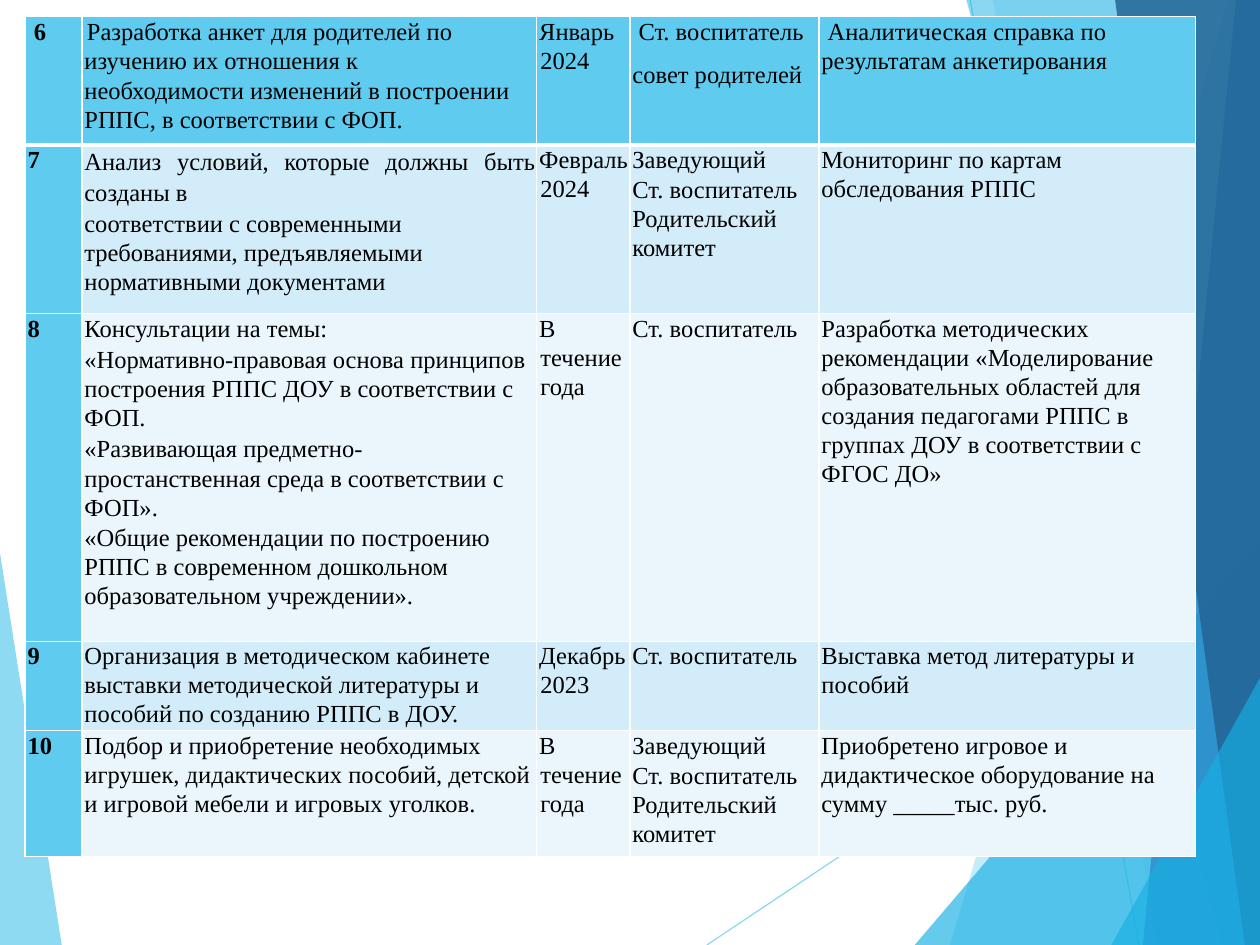
from lxml import etree
from pptx import Presentation
from pptx.dml.color import RGBColor
from pptx.enum.shapes import MSO_CONNECTOR
from pptx.enum.text import PP_ALIGN
from pptx.oxml.ns import qn
from pptx.util import Inches, Pt

STRAIGHT = MSO_CONNECTOR.STRAIGHT
LEFT, JUSTIFY = PP_ALIGN.LEFT, PP_ALIGN.JUSTIFY

WIDTH, HEIGHT = 10, 7.5
FONT, TEXT_SIZE = "Times New Roman", 14
COLORS = {
    "sky": "5FCBEF", "cyan": "17B0E4", "blue": "2E83C3", "navy": "226292",
    "band dark": "D2ECF9", "band light": "EAF6FC", "border": "FFFFFF", "text": "000000",
}

# Background facets: colour, opacity in percent, corner points in inches
LEFT_FACET = ("sky", 70, [(0, 4.39), (0.49, HEIGHT), (0, HEIGHT)])
RIGHT_FACETS = [
    ("sky", 36, [(9.75, 0), (7.54, HEIGHT), (WIDTH, HEIGHT), (WIDTH, 0)]),
    ("sky", 20, [(7.88, 0), (9.19, HEIGHT), (WIDTH, HEIGHT), (WIDTH, 0)]),
    ("cyan", 66, [(7.26, HEIGHT), (WIDTH, 4.29), (WIDTH, HEIGHT)]),
    ("cyan", 50, [(7.67, 0), (9.7, HEIGHT), (WIDTH, HEIGHT), (WIDTH, 0)]),
    ("blue", 70, [(9.81, 0), (9.07, HEIGHT), (WIDTH, HEIGHT), (WIDTH, 0)]),
    ("navy", 82, [(8.85, 0), (9.88, HEIGHT), (WIDTH, HEIGHT), (WIDTH, 0)]),
    ("cyan", 66, [(8.82, HEIGHT), (WIDTH, 5.38), (WIDTH, HEIGHT)]),
]
RAYS = [((5.61, HEIGHT), (WIDTH, 4.57)), ((7.7, 0), (9.04, HEIGHT))]

TABLE_LEFT, TABLE_TOP = 0.2, 0.13
COLUMN_WIDTHS = [0.45, 3.61, 0.74, 1.5, 2.99]
ROW_HEIGHTS = [1.02, 1.34, 2.6, 0.71, 1]

# Each cell is a list of paragraphs
ROWS = [
    [
        [" 6"],
        ["Разработка анкет для родителей по изучению их отношения к",
         "необходимости изменений в построении РППС, в соответствии с ФОП."],
        ["Январь 2024"],
        [" Ст. воспитатель", "совет родителей"],
        [" Аналитическая справка по результатам анкетирования"],
    ],
    [
        ["7"],
        ["Анализ условий, которые должны быть созданы в",
         "соответствии с современными требованиями, предъявляемыми "
         "нормативными документами"],
        ["Февраль 2024"],
        ["Заведующий", "Ст. воспитатель Родительский комитет"],
        ["Мониторинг по картам обследования РППС"],
    ],
    [
        ["8"],
        ["Консультации на темы:",
         "«Нормативно-правовая основа принципов построения РППС ДОУ в "
         "соответствии с ФОП.",
         "«Развивающая предметно-",
         "простанственная среда в соответствии с ФОП».",
         "«Общие рекомендации по построению РППС в современном дошкольном "
         "образовательном учреждении»."],
        ["В течение года"],
        ["Ст. воспитатель"],
        ["Разработка методических рекомендации «Моделирование образовательных "
         "областей для создания педагогами РППС в группах ДОУ в соответствии с ФГОС ДО»"],
    ],
    [
        ["9"],
        ["Организация в методическом кабинете выставки методической литературы "
         "и пособий по созданию РППС в ДОУ."],
        ["Декабрь 2023"],
        ["Ст. воспитатель"],
        ["Выставка метод литературы и пособий"],
    ],
    [
        ["10"],
        ["Подбор и приобретение необходимых игрушек, дидактических пособий, "
         "детской и игровой мебели и игровых уголков."],
        ["В течение года"],
        ["Заведующий", "Ст. воспитатель Родительский комитет"],
        ["Приобретено игровое и дидактическое оборудование на сумму _____тыс. руб."],
    ],
]

# Exceptions to the common paragraph format
LINE_SPACING = 1.07
SPECIAL_SPACING = {(1, 1, 0): 1.15, (2, 1, 0): 1.08, (2, 1, 1): 1.08, (2, 1, 2): 1.08}
SPACE_AFTER, WIDE_SPACE_AFTER = 0.8, 8
WIDE_CELLS = {(0, 0), (0, 2), (0, 3)}
JUSTIFIED = {(1, 1, 0)}
FIRST_LINE_INDENTS = {(0, 1, 0): 0.02}
MONTH_COLUMN = 2


def color(name):
    return RGBColor.from_string(COLORS[name])


def set_opacity(shape, percent):
    for rgb in shape._element.spPr.iter(qn("a:srgbClr")):
        etree.SubElement(rgb, qn("a:alpha"), val=str(percent * 1000))


def add_facet(slide, color_name, opacity, points):
    corners = [(Inches(x), Inches(y)) for x, y in points]
    builder = slide.shapes.build_freeform(*corners[0])
    builder.add_line_segments(corners[1:], close=True)
    shape = builder.convert_to_shape()
    shape.shadow.inherit = False
    shape.fill.solid()
    shape.fill.fore_color.rgb = color(color_name)
    shape.line.fill.background()
    set_opacity(shape, opacity)


def add_ray(slide, start, end):
    ray = slide.shapes.add_connector(STRAIGHT, *map(Inches, start + end))
    ray.line.color.rgb = color("sky")
    ray.line.width = Pt(0.75)
    set_opacity(ray, 70)
    etree.SubElement(ray._element.spPr, qn("a:effectLst"))


def set_borders(cell, row):
    widths = {"L": 1, "R": 1, "T": 3 if row == 1 else 1, "B": 3 if row == 0 else 1}
    properties = cell._tc.get_or_add_tcPr()
    for side, width in widths.items():
        line = etree.SubElement(properties, qn(f"a:ln{side}"), w=str(Pt(width)))
        fill = etree.SubElement(line, qn("a:solidFill"))
        etree.SubElement(fill, qn("a:srgbClr"), val=COLORS["border"])


def format_paragraph(paragraph, row, column, index):
    key = (row, column, index)
    wide = (row, column) in WIDE_CELLS
    paragraph.alignment = JUSTIFY if key in JUSTIFIED else LEFT
    paragraph.line_spacing = SPECIAL_SPACING.get(key, LINE_SPACING)
    paragraph.space_after = Pt(WIDE_SPACE_AFTER if wide else SPACE_AFTER)
    properties = paragraph._p.get_or_add_pPr()
    properties.set("marL", str(Inches(0.01 if wide or column == MONTH_COLUMN else 0)))
    properties.set("indent", str(Inches(FIRST_LINE_INDENTS.get(key, -0.01))))
    for run in paragraph.runs:
        run.font.name = FONT
        run.font.size = Pt(TEXT_SIZE)
        run.font.bold = column == 0
        run.font.color.rgb = color("text")


def fill_cell(cell, row, column, paragraphs):
    cell.margin_left, cell.margin_right = Inches(0.02), Inches(0.01)
    cell.margin_top = cell.margin_bottom = 0
    set_borders(cell, row)
    band = "band dark" if row % 2 else "band light"
    cell.fill.solid()
    cell.fill.fore_color.rgb = color("sky" if row == 0 or column == 0 else band)
    cell.text_frame.text = "\n".join(paragraphs)
    for index, paragraph in enumerate(cell.text_frame.paragraphs):
        format_paragraph(paragraph, row, column, index)


def add_plan_table(slide):
    table = slide.shapes.add_table(
        len(ROWS), len(COLUMN_WIDTHS), Inches(TABLE_LEFT), Inches(TABLE_TOP),
        Inches(sum(COLUMN_WIDTHS)), Inches(sum(ROW_HEIGHTS))).table
    for column, width in zip(table.columns, COLUMN_WIDTHS):
        column.width = Inches(width)
    for row, height in zip(table.rows, ROW_HEIGHTS):
        row.height = Inches(height)
    for row, cells in enumerate(ROWS):
        for column, paragraphs in enumerate(cells):
            fill_cell(table.cell(row, column), row, column, paragraphs)


def main():
    presentation = Presentation()
    presentation.slide_width, presentation.slide_height = Inches(WIDTH), Inches(HEIGHT)
    slide = presentation.slides.add_slide(presentation.slide_layouts[6])
    add_facet(slide, *LEFT_FACET)
    for start, end in RAYS:
        add_ray(slide, start, end)
    for facet in RIGHT_FACETS:
        add_facet(slide, *facet)
    add_plan_table(slide)
    presentation.save("out.pptx")


if __name__ == "__main__":
    main()
